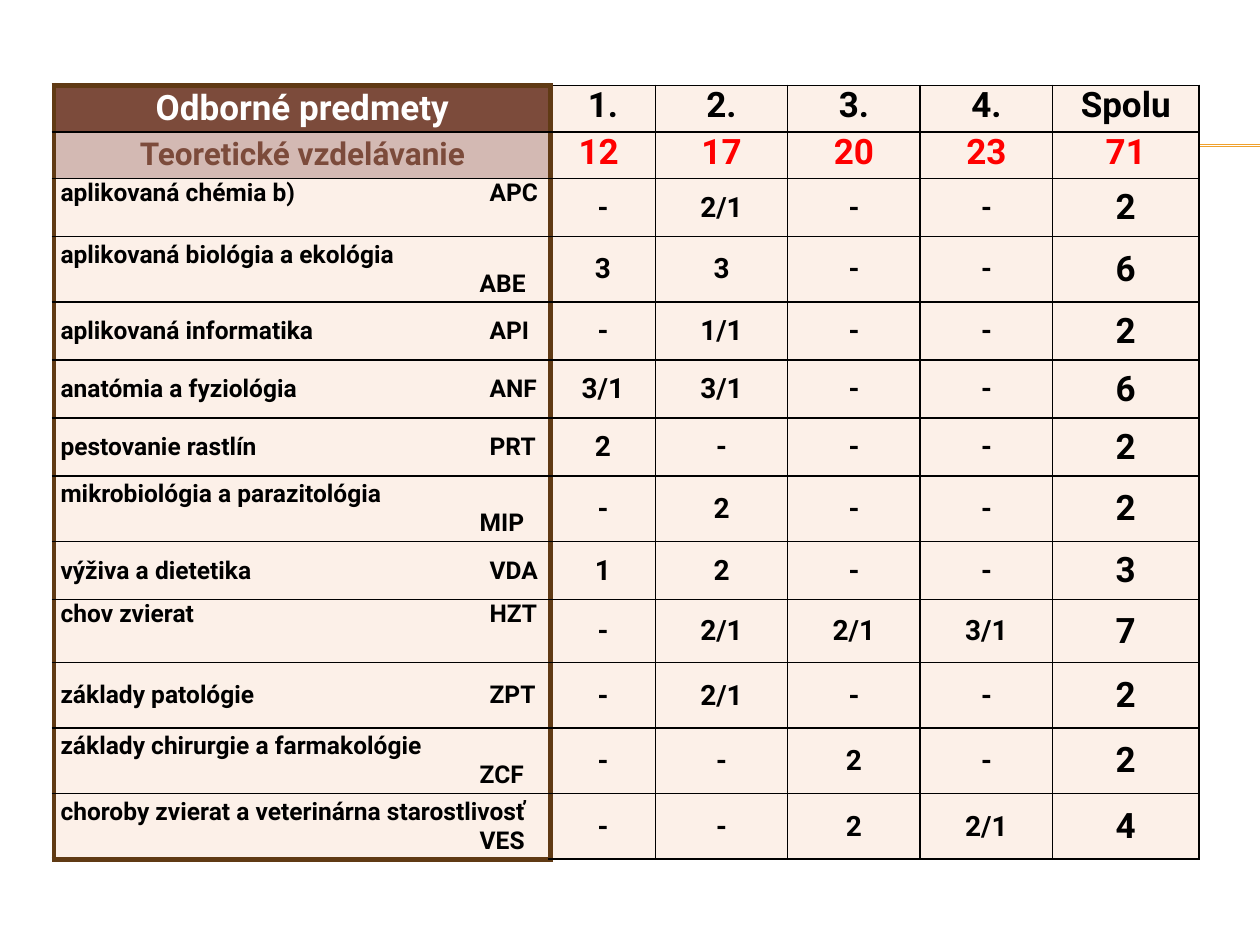
from copy import deepcopy

from lxml.etree import SubElement
from pptx import Presentation
from pptx.dml.color import RGBColor
from pptx.enum.shapes import MSO_CONNECTOR as Connector
from pptx.enum.text import MSO_ANCHOR as Anchor, PP_ALIGN as Align
from pptx.oxml.ns import qn
from pptx.util import Cm, Pt

BLACK = RGBColor(0x00, 0x00, 0x00)
WHITE = RGBColor(0xFF, 0xFF, 0xFF)
RED = RGBColor(0xFF, 0x00, 0x00)
CREAM = RGBColor(0xFC, 0xF0, 0xE8)
BROWN = RGBColor(0x7C, 0x4B, 0x3B)
ROSE = RGBColor(0xD3, 0xB9, 0xB3)
DARK_BROWN = RGBColor(0x60, 0x3A, 0x14)
GOLD = RGBColor(0xF0, 0xA2, 0x2E)

THIN = (BLACK, 1)
THICK = (DARK_BROWN, 3)

COLUMN_WIDTHS = [10.01, 2.11, 2.67, 2.67, 2.67, 2.95]
HEADER_HEIGHT = 0.94

HEADERS = [
    ("Odborné predmety", "1.", "2.", "3.", "4.", "Spolu"),
    ("Teoretické vzdelávanie", "12 ", "17", "20", "23", "71"),
]
# A line break (\v) puts the code on a second line; a tab leads to the code.
SUBJECTS = [
    (1.17, "aplikovaná chémia b)\tAPC", "-", "2/1", "-", "-", "2"),
    (1.32, "aplikovaná biológia a ekológia\v\tABE", "3", "3", "-", "-", "6"),
    (1.17, "aplikovaná informatika\tAPI", "-", "1/1", "-", "-", "2"),
    (1.17, "anatómia a fyziológia\tANF", "3/1", "3/1", "-", "-", "6"),
    (1.17, "pestovanie rastlín\tPRT", "2", "-", "-", "-", "2"),
    (1.32, "mikrobiológia a parazitológia\v\tMIP", "-", "2", "-", "-", "2"),
    (1.17, "výživa a dietetika\tVDA", "1", "2", "-", "-", "3"),
    (1.27, "chov zvierat\tHZT", "-", "2/1", "2/1", "3/1", "7"),
    (1.32, "základy patológie\tZPT", "-", "2/1", "-", "-", "2"),
    (1.32, "základy chirurgie a farmakológie\v\tZCF", "-", "-", "2", "-", "2"),
    (1.32, "choroby zvierat a veterinárna starostlivosť\v\tVES",
     "-", "-", "2", "2/1", "4"),
]
TOP_ALIGNED = ("aplikovaná chémia", "chov zvierat")


class SlideBuilder:
    font_name = "Roboto"

    def __init__(self, slide):
        self.slide = slide

    def line(self, left, right, y):
        connector = self.slide.shapes.add_connector(
            Connector.STRAIGHT, Cm(left), Cm(y), Cm(right), Cm(y))
        connector.line.color.rgb = GOLD
        connector.line.width = Pt(0.75)
        SubElement(connector._element.spPr, qn("a:effectLst"))

    def table(self, left, top, widths, heights):
        frame = self.slide.shapes.add_table(
            len(heights), len(widths), Cm(left), Cm(top),
            Cm(sum(widths)), Cm(sum(heights)))
        table = frame.table
        table.first_row = table.horz_banding = False
        for column, width in zip(table.columns, widths):
            column.width = Cm(width)
        for row, height in zip(table.rows, heights):
            row.height = Cm(height)
        return table

    def cell(self, cell, text, size, borders, color=BLACK, fill=CREAM,
             align=Align.CENTER, anchor=Anchor.MIDDLE, margin=0.13, tab=None):
        layout = {
            "margin_left": Cm(margin), "margin_right": Cm(margin),
            "margin_top": 0, "margin_bottom": 0, "vertical_anchor": anchor,
        }
        for name, value in layout.items():
            setattr(cell, name, value)
        paragraph = cell.text_frame.paragraphs[0]
        paragraph.text = text
        paragraph.alignment = align
        font_format = {"name": self.font_name, "size": Pt(size), "bold": True}
        for run in paragraph.runs:
            for name, value in font_format.items():
                setattr(run.font, name, value)
            run.font.color.rgb = color
        for line_break in paragraph._p.findall(qn("a:br")):
            line_break.append(deepcopy(paragraph.runs[0]._r.rPr))
        if tab:
            tabs = SubElement(paragraph._p.get_or_add_pPr(), qn("a:tabLst"))
            SubElement(tabs, qn("a:tab"), pos=str(Cm(tab)), algn="l")
        self.borders(cell, borders)
        cell.fill.solid()
        cell.fill.fore_color.rgb = fill

    def borders(self, cell, borders):
        """Draw the left, right, top and bottom edges, in that order."""
        properties = cell._tc.get_or_add_tcPr()
        for side, (color, width) in zip("LRTB", borders):
            edge = SubElement(properties, qn(f"a:ln{side}"), w=str(Pt(width)))
            fill = SubElement(edge, qn("a:solidFill"))
            SubElement(fill, qn("a:srgbClr"), val=str(color))


def edges(row, column, last_row):
    """A thick frame surrounds the first column; all else is thin."""
    first = column == 0
    return (
        THICK if column < 2 else THIN,
        THICK if first else THIN,
        THICK if first and row == 0 else THIN,
        THICK if first and row == last_row else THIN,
    )


def subject_format(text):
    top = text.startswith(TOP_ALIGNED)
    return {
        "size": 14, "align": Align.LEFT,
        "anchor": Anchor.TOP if top else Anchor.MIDDLE,
        "tab": 8.45 if "\v" in text else 8.65,
    }


def cell_format(row, column, text):
    if row == 0 and column == 0:
        return {"size": 20, "color": WHITE, "fill": BROWN}
    if row == 1 and column == 0:
        return {"size": 18, "color": BROWN, "fill": ROSE}
    if row == 0:
        return {"size": 20, "anchor": Anchor.TOP, "margin": 0.08}
    if row == 1:
        return {"size": 20, "color": RED, "anchor": Anchor.TOP}
    if column == 0:
        return subject_format(text)
    return {"size": 20 if column == len(COLUMN_WIDTHS) - 1 else 16}


def main():
    presentation = Presentation()
    presentation.slide_width = Cm(25.4)
    presentation.slide_height = Cm(19.05)
    builder = SlideBuilder(
        presentation.slides.add_slide(presentation.slide_layouts[6]))

    for y in (2.92, 2.95):
        builder.line(1.42, 25.4, y)

    rows = HEADERS + [subject[1:] for subject in SUBJECTS]
    heights = [HEADER_HEIGHT] * len(HEADERS) + [s[0] for s in SUBJECTS]
    table = builder.table(1.09, 1.72, COLUMN_WIDTHS, heights)
    for row, texts in enumerate(rows):
        for column, text in enumerate(texts):
            builder.cell(table.cell(row, column), text,
                         borders=edges(row, column, len(rows) - 1),
                         **cell_format(row, column, text))

    presentation.save("out.pptx")


if __name__ == "__main__":
    main()
